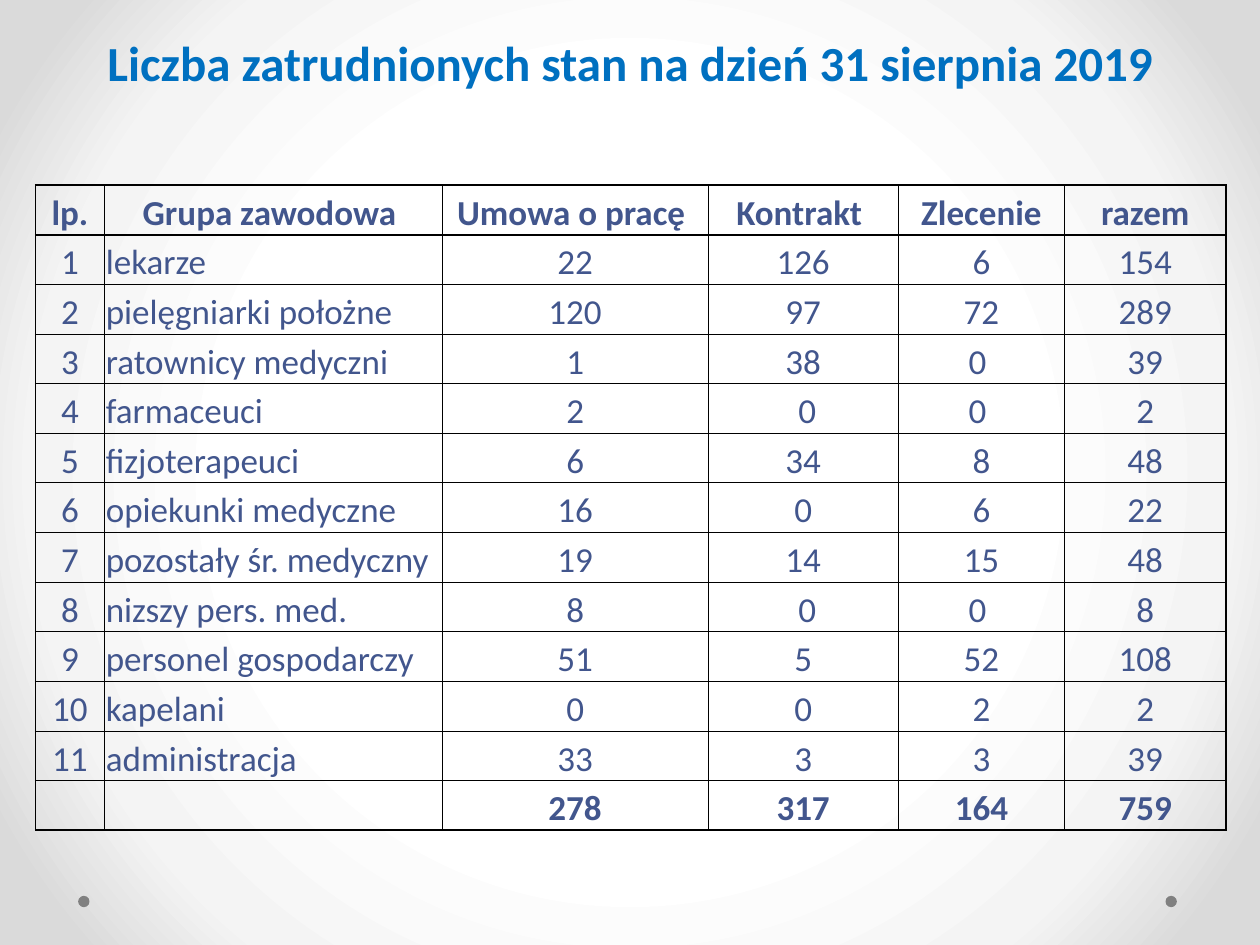
"""Build the slide with the headcount table by staff group."""
import pptx
import pptx.dml.color
import pptx.enum.shapes
import pptx.enum.text
import pptx.oxml
import pptx.oxml.ns
import pptx.util

TITLE = "Liczba zatrudnionych stan na dzień 31 sierpnia 2019"
ROWS = [
    ("lp.", "Grupa zawodowa ", "Umowa o pracę ", "Kontrakt ", "Zlecenie", "razem"),
    ("1", "lekarze", "22", "126", "6", "154"),
    ("2", "pielęgniarki położne", "120", "97", "72", "289"),
    ("3", "ratownicy medyczni", "1", "38", "0 ", "39"),
    ("4", "farmaceuci", "2", " 0", "0 ", "2"),
    ("5", "fizjoterapeuci", "6", "34", "8", "48"),
    ("6", "opiekunki medyczne", "16", "0", "6", "22"),
    ("7", "pozostały śr. medyczny", "19", "14", "15", "48"),
    ("8", "nizszy pers. med.", "8", " 0", "0 ", "8"),
    ("9", "personel gospodarczy", "51", "5", "52", "108"),
    ("10", "kapelani", "0", "0", "2", "2"),
    ("11", "administracja", "33", "3", "3", "39"),
    ("", "", "278", "317", "164", "759"),
]
COLS = [0.55, 2.68, 2.11, 1.51, 1.32, 1.28]
STOPS = [(50, "FFFFFF"), (76, "F4F4F4"), (92, "DADADA")]
WIDE, HIGH = 10, 7.5
LEFT, TOP, TALL = 0.28, 1.47, 5.12
DOT = 0.09
LAST = len(ROWS) - 1
THICK_ROWS = {0, 1, LAST, LAST + 1}
THICK_COLS = {len(COLS) - 1, len(COLS)}
NS = pptx.oxml.ns.nsdecls("a", "p")
ALIGN = pptx.enum.text.PP_ALIGN
ANCHOR = pptx.enum.text.MSO_ANCHOR
inch = pptx.util.Inches


def color(code):
    """Return a colour from a hex string."""
    return pptx.dml.color.RGBColor.from_string(code)


def write(frame, text, size, code, bold, align):
    """Set the text of a frame and format its one paragraph."""
    frame.text = text
    par = frame.paragraphs[0]
    par.alignment = align
    for font in [run.font for run in par.runs] or [par.font]:
        font.name, font.size, font.bold = "Calibri", pptx.util.Pt(size), bold
        font.color.rgb = color(code)


def paint(slide):
    """Give the slide a round gradient background."""
    stops = "".join(
        f'<a:gs pos="{pos * 1000}"><a:srgbClr val="{code}"/></a:gs>'
        for pos, code in STOPS
    )
    back = pptx.oxml.parse_xml(
        f'<p:bg {NS}><p:bgPr><a:gradFill rotWithShape="1"><a:gsLst>{stops}</a:gsLst>'
        '<a:path path="circle"><a:fillToRect l="50000" t="50000" r="50000" b="50000"/>'
        "</a:path></a:gradFill><a:effectLst/></p:bgPr></p:bg>"
    )
    slide.element.cSld.insert(0, back)


def border(cell, row, col):
    """Draw the four borders of a cell, thick on the chosen grid lines."""
    sides = [
        ("lnL", col in THICK_COLS),
        ("lnR", col + 1 in THICK_COLS),
        ("lnT", row in THICK_ROWS),
        ("lnB", row + 1 in THICK_ROWS),
    ]
    props = cell._tc.get_or_add_tcPr()
    for spot, (side, thick) in enumerate(sides):
        width = pptx.util.Pt(1 if thick else 0.5)
        line = pptx.oxml.parse_xml(
            f'<a:{side} {NS} w="{width}"><a:solidFill><a:srgbClr val="000000"/>'
            f'</a:solidFill><a:prstDash val="solid"/></a:{side}>'
        )
        props.insert(spot, line)


def fill_table(slide):
    """Add the headcount table."""
    frame = slide.shapes.add_table(
        len(ROWS), len(COLS), inch(LEFT), inch(TOP), inch(sum(COLS)), inch(TALL)
    )
    table = frame.table
    table.first_row = table.horz_banding = False
    for col, width in enumerate(COLS):
        table.columns[col].width = inch(width)
    for row, texts in enumerate(ROWS):
        table.rows[row].height = inch(TALL / len(ROWS))
        for col, text in enumerate(texts):
            cell = table.cell(row, col)
            cell.fill.background()
            cell.vertical_anchor = ANCHOR.BOTTOM
            cell.margin_left = cell.margin_right = cell.margin_top = inch(0.01)
            cell.margin_bottom = 0
            name = col == 1 and row > 0
            align = ALIGN.LEFT if name else ALIGN.CENTER
            write(cell.text_frame, text, 20, "42568D", row in (0, LAST), align)
            border(cell, row, col)


def main():
    """Build and save the slide."""
    deck = pptx.Presentation()
    deck.slide_width, deck.slide_height = inch(WIDE), inch(HIGH)
    slide = deck.slides.add_slide(deck.slide_layouts[6])
    paint(slide)
    for left in (9.25, 0.62):
        dot = slide.shapes.add_shape(
            pptx.enum.shapes.MSO_SHAPE.OVAL, inch(left), inch(7.11), inch(DOT), inch(DOT)
        )
        dot.shadow.inherit = False
        dot.fill.solid()
        dot.fill.fore_color.rgb = color("808080")
        dot.line.fill.background()
    title = slide.shapes.add_textbox(inch(0.5), 0, inch(WIDE - 1), inch(0.99))
    title.text_frame.word_wrap = True
    title.text_frame.vertical_anchor = ANCHOR.MIDDLE
    write(title.text_frame, TITLE, 28, "0070C0", True, ALIGN.CENTER)
    fill_table(slide)
    deck.save("out.pptx")


if __name__ == "__main__":
    main()
